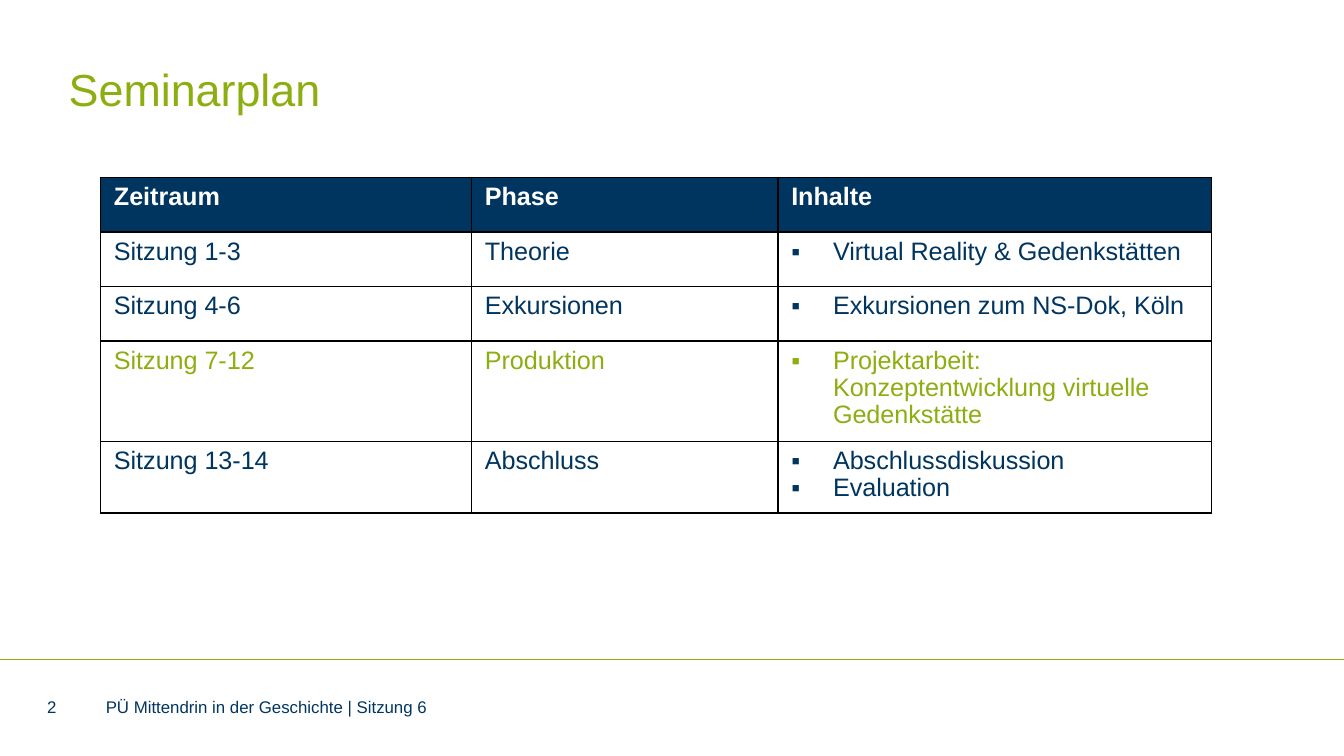
from lxml import etree
from pptx import Presentation
from pptx.dml.color import RGBColor
from pptx.enum import shapes, text
from pptx.oxml import ns
from pptx.util import Cm, Pt

NAVY = RGBColor(0x00, 0x35, 0x60)
GREEN = RGBColor(0x8D, 0xAE, 0x10)
WHITE = RGBColor(0xFF, 0xFF, 0xFF)
BLACK = RGBColor(0x00, 0x00, 0x00)

HEAD = ["Zeitraum", "Phase", "Inhalte"]
PLAN = [
    ("Sitzung 1-3", "Theorie", ["Virtual Reality & Gedenkstätten"]),
    ("Sitzung 4-6", "Exkursionen", ["Exkursionen zum NS-Dok, Köln"]),
    ("Sitzung 7-12", "Produktion",
     ["Projektarbeit: Konzeptentwicklung virtuelle Gedenkstätte"]),
    ("Sitzung 13-14", "Abschluss", ["Abschlussdiskussion", "Evaluation"]),
]
ACTIVE = 3  # table row of the current phase
WIDTHS = [7.01, 5.79, 8.2]
ROW = 1.03


def add_bullet(para):
    props = para._p.get_or_add_pPr()
    props.set("marL", str(Cm(0.79)))
    props.set("indent", str(-Cm(0.79)))
    etree.SubElement(props, ns.qn("a:buFont"), typeface="Arial")
    etree.SubElement(props, ns.qn("a:buChar"), char="▪")


def write(frame, lines, size=13.5, color=NAVY, bold=False, bullet=False,
          spacing=None):
    frame.word_wrap = True
    for i, line in enumerate(lines):
        para = frame.paragraphs[0] if i == 0 else frame.add_paragraph()
        if spacing:
            para.line_spacing = spacing
        if bullet:
            add_bullet(para)
        run = para.add_run()
        run.text = line
        font = run.font
        font.name, font.size, font.bold = "Arial", Pt(size), bold
        font.color.rgb = color


def add_label(slide, line, left, top, width, height, **style):
    box = slide.shapes.add_textbox(Cm(left), Cm(top), Cm(width), Cm(height))
    frame = box.text_frame
    frame.margin_left = frame.margin_right = 0
    frame.margin_top = frame.margin_bottom = 0
    frame.vertical_anchor = text.MSO_ANCHOR.MIDDLE
    write(frame, [line], **style)


def add_rule(slide, y, width):
    rule = slide.shapes.add_connector(
        shapes.MSO_CONNECTOR.STRAIGHT, 0, Cm(y), width, Cm(y))
    rule.line.color.rgb = GREEN
    rule.line.width = Pt(0.5)
    etree.SubElement(rule._element.spPr, ns.qn("a:effectLst"))


def add_borders(cell):
    props = cell._tc.get_or_add_tcPr()
    for i, side in enumerate(("lnL", "lnR", "lnT", "lnB")):
        line = etree.Element(ns.qn("a:" + side), w=str(Pt(1)))
        fill = etree.SubElement(line, ns.qn("a:solidFill"))
        etree.SubElement(fill, ns.qn("a:srgbClr"), val=str(BLACK))
        props.insert(i, line)  # borders come before the fill


def fill_cell(cell, lines, fill, **style):
    if fill is None:
        cell.fill.background()
    else:
        cell.fill.solid()
        cell.fill.fore_color.rgb = fill
    add_borders(cell)
    write(cell.text_frame, lines, spacing=0.96, **style)


def add_plan(slide):
    count = len(PLAN) + 1
    table = slide.shapes.add_table(
        count, len(HEAD), Cm(1.9), Cm(3.35),
        Cm(sum(WIDTHS)), Cm(ROW * count)).table
    table.horz_banding = False
    for col, width in zip(table.columns, WIDTHS):
        col.width = Cm(width)
    for row in table.rows:
        row.height = Cm(ROW)

    # Header row
    for c, name in enumerate(HEAD):
        fill_cell(table.cell(0, c), [name], NAVY, color=WHITE, bold=True)

    # Sessions
    for r, (time, phase, topics) in enumerate(PLAN, 1):
        color = GREEN if r == ACTIVE else NAVY
        fill = None if r == 1 else WHITE
        for c, lines in enumerate(([time], [phase], topics)):
            fill_cell(table.cell(r, c), lines, fill, color=color,
                      bullet=c == 2)


def main():
    deck = Presentation()
    deck.slide_width, deck.slide_height = Cm(25.4), Cm(14.28)
    slide = deck.slides.add_slide(deck.slide_layouts[6])

    # Title and plan
    add_rule(slide, 12.46, deck.slide_width)
    add_label(slide, "Seminarplan", 1.3, 1.09, 21, 1.3,
              size=24, color=GREEN, spacing=0.9)
    add_plan(slide)

    # Footer
    add_label(slide, "2", 0.89, 13.21, 0.71, 0.3, size=9)
    add_label(slide, "PÜ Mittendrin in der Geschichte | Sitzung 6",
              2, 13.21, 15.3, 0.3, size=9)
    deck.save("out.pptx")


if __name__ == "__main__":
    main()
